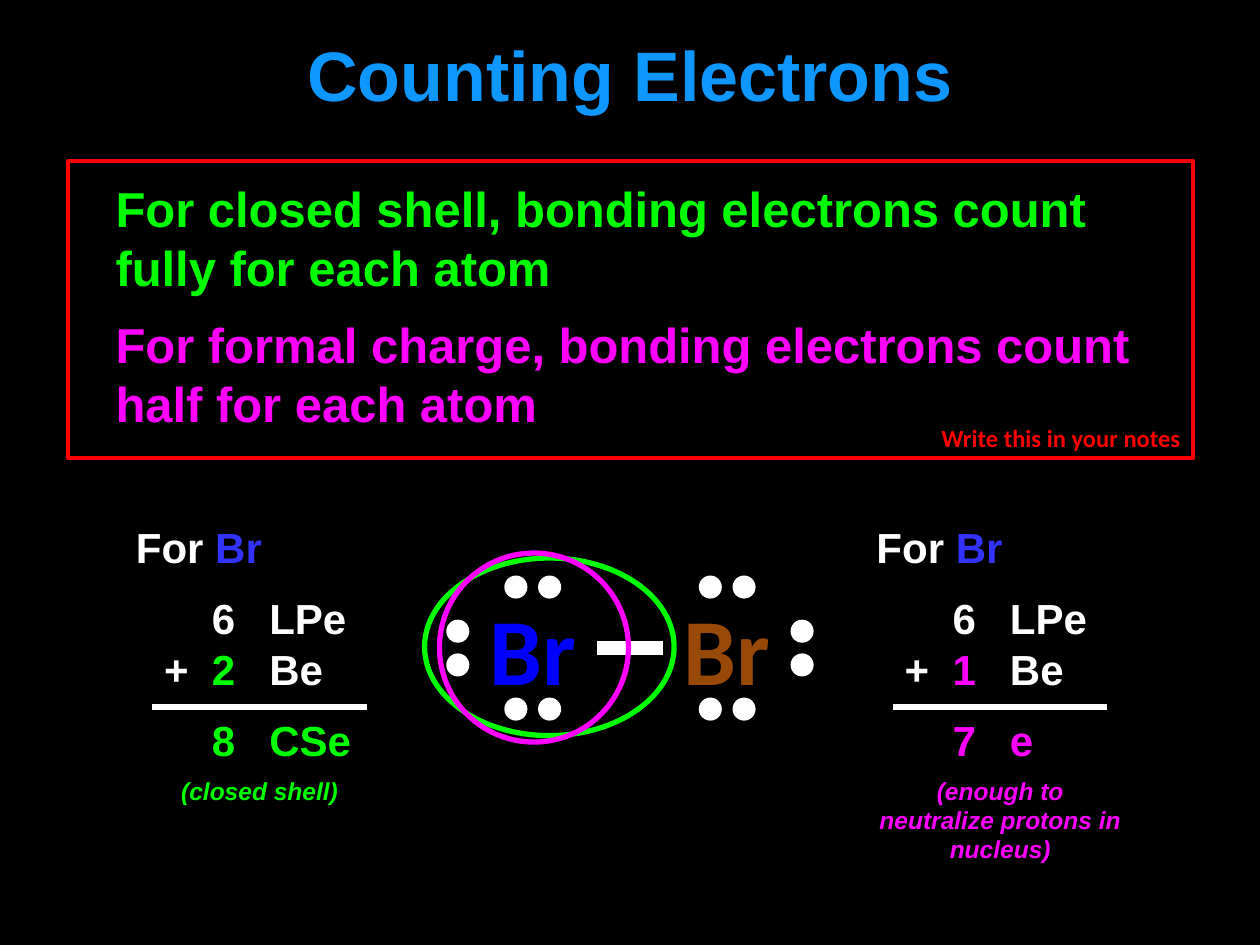
from lxml.etree import SubElement
from pptx import Presentation
from pptx.dml.color import RGBColor
from pptx.enum.shapes import MSO_CONNECTOR as Connector, MSO_SHAPE as Shape
from pptx.enum.text import MSO_ANCHOR as Anchor, MSO_AUTO_SIZE as AutoSize, PP_ALIGN as Align
from pptx.oxml.ns import qn
from pptx.util import Cm, Pt

COLORS = {
    "black": "000000", "white": "FFFFFF", "sky": "0D97FF", "red": "FF0000",
    "green": "00FF00", "magenta": "FF00FF", "blue": "0000FF",
    "brown": "984807", "indigo": "3333FF",
}
TABS = ((2.24, "r"), (2.69, "l"))
GROW = {"auto_size": AutoSize.SHAPE_TO_FIT_TEXT}
TIGHT = dict(GROW, word_wrap=False, margin_left=0, margin_top=0, margin_right=0, margin_bottom=0)


def color(name):
    """Return the named palette colour."""
    return RGBColor.from_string(COLORS[name])


def apply(target, formats):
    """Set every attribute in the formats on the target."""
    for name, value in formats.items():
        setattr(target, name, value)


def add_span(para, text, ink, size, font="Arial", italic=False):
    """Add one bold run of text to a paragraph."""
    span = para.add_run()
    span.text = text
    apply(span.font, {"name": font, "size": Pt(size), "bold": True, "italic": italic})
    span.font.color.rgb = color(ink)


def add_text_box(shapes, box, **formats):
    """Add a text box and return its text frame."""
    frame = shapes.add_textbox(*map(Cm, box)).text_frame
    apply(frame, {"word_wrap": True, **formats})
    return frame


def add_outline(shapes, kind, box, ink, width, fill=None):
    """Add a preset shape with a coloured outline and an optional fill."""
    shape = shapes.add_shape(kind, *map(Cm, box))
    shape.shadow.inherit = False
    shape.line.color.rgb = color(ink)
    shape.line.width = Pt(width)
    if fill:
        shape.fill.solid()
        shape.fill.fore_color.rgb = color(fill)
    else:
        shape.fill.background()
    return shape


def add_rule(shapes, start, end, y, width):
    """Add a horizontal white line."""
    rule = shapes.add_connector(Connector.STRAIGHT, Cm(start), Cm(y), Cm(end), Cm(y))
    rule.line.color.rgb = color("white")
    rule.line.width = Pt(width)
    SubElement(rule._element.spPr, qn("a:effectLst"))


def add_tabs(para):
    """Give a paragraph the tab stops of the tally columns."""
    stops = SubElement(para._p.get_or_add_pPr(), qn("a:tabLst"))
    for position, side in TABS:
        SubElement(stops, qn("a:tab"), pos=str(Cm(position)), algn=side)


def add_title(page, box):
    """Place the centred slide title."""
    frame = add_text_box(page.shapes, box, vertical_anchor=Anchor.MIDDLE)
    para = frame.paragraphs[0]
    para.alignment = Align.CENTER
    add_span(para, "Counting Electrons", "sky", 40)


def add_rules_panel(page, box):
    """Place the framed panel with the two counting rules."""
    left, top, width, height = box
    panel = add_outline(page.shapes, Shape.RECTANGLE, box, "red", 2.25)
    panel.text_frame.vertical_anchor = Anchor.BOTTOM
    para = panel.text_frame.paragraphs[0]
    para.alignment = Align.RIGHT
    add_span(para, "Write this in your notes", "red", 14, "Calibri")
    statements = (
        ("For closed shell, bonding electrons count fully for each atom", "green"),
        ("For formal charge, bonding electrons count half for each atom", "magenta"),
    )
    for row, (text, ink) in enumerate(statements):
        place = (left + 0.71, top + 0.23 + 2.74 * row, width - 1.42, 2.64)
        frame = add_text_box(page.shapes, place, **GROW)
        add_span(frame.paragraphs[0], text, ink, 28)


def add_atom(shapes, x, y, ink, side):
    """Place an atom centred at x, y with lone pairs above, below and on one side."""
    frame = add_text_box(shapes, (x - 0.88, y - 1.16, 1.75, 2.31), **TIGHT)
    para = frame.paragraphs[0]
    para.alignment = Align.CENTER
    add_span(para, "Br", ink, 54, "Calibri")
    dot, half_gap = 0.43, 0.34
    for step in (-half_gap, half_gap):
        for dx, dy in ((step, 1.23), (step, -1.23), (side * 1.51, step)):
            place = (x + dx - dot / 2, y + dy - dot / 2, dot, dot)
            add_outline(shapes, Shape.OVAL, place, "white", 1, "white")


def add_molecule(page, box):
    """Place the bonded atoms and the two loops around the left one."""
    left, top, width, height = box
    x, y = left + width / 2, top + height / 2
    group = page.shapes.add_group_shape()
    for side, ink in ((1, "brown"), (-1, "blue")):
        add_atom(group.shapes, x + side * 1.96, y, ink, side)
    add_rule(group.shapes, x + 0.66, x - 0.66, y, 8)
    add_outline(page.shapes, Shape.OVAL, (left, top + 0.1, 5.03, 3.58), "green", 3)
    add_outline(page.shapes, Shape.OVAL, (left + 0.3, top, 3.81, 3.81), "magenta", 3)


def add_tally(page, box, bonding, total, unit, remark, ink):
    """Place one electron sum with its rule and remark."""
    left, top, width, height = box
    frame = add_text_box(page.shapes, box, **GROW)
    lines = (
        ({"space_after": Pt(12)}, [("For ", "white"), ("Br", "indigo")]),
        ({}, [("\t6 \tLPe", "white")]),
        ({}, [("\t+  ", "white"), (bonding, ink), (" \tBe", "white")]),
        ({"space_before": Pt(12)}, [(f"\t{total} \t{unit}", ink)]),
        ({"space_before": Pt(6), "alignment": Align.CENTER}, [(remark, ink)]),
    )
    for row, (formats, spans) in enumerate(lines):
        para = frame.add_paragraph() if row else frame.paragraphs[0]
        apply(para, formats)
        if row:
            add_tabs(para)
        is_remark = row == len(lines) - 1
        for text, span_ink in spans:
            add_span(para, text, span_ink, 14 if is_remark else 24, italic=is_remark)
    add_rule(page.shapes, left + 4.9, left + 0.58, top + 3.86, 3)


def main():
    """Build the slide and save it."""
    deck = Presentation()
    deck.slide_width, deck.slide_height = Cm(25.4), Cm(19.05)
    page = deck.slides.add_slide(deck.slide_layouts[6])
    page.background.fill.solid()
    page.background.fill.fore_color.rgb = color("black")
    add_title(page, (0.51, 0.46, 24.38, 2.03))
    add_rules_panel(page, (1.37, 3.25, 22.68, 5.99))
    add_molecule(page, (8.56, 11.15, 8.28, 3.83))
    add_tally(page, (2.49, 10.39, 5.49, 6.02), "2", "8", "CSe", "(closed shell)", "green")
    add_tally(page, (17.42, 10.39, 5.49, 6.83), "1", "7", "e",
              "(enough to neutralize protons in nucleus)", "magenta")
    deck.save("out.pptx")


if __name__ == "__main__":
    main()
